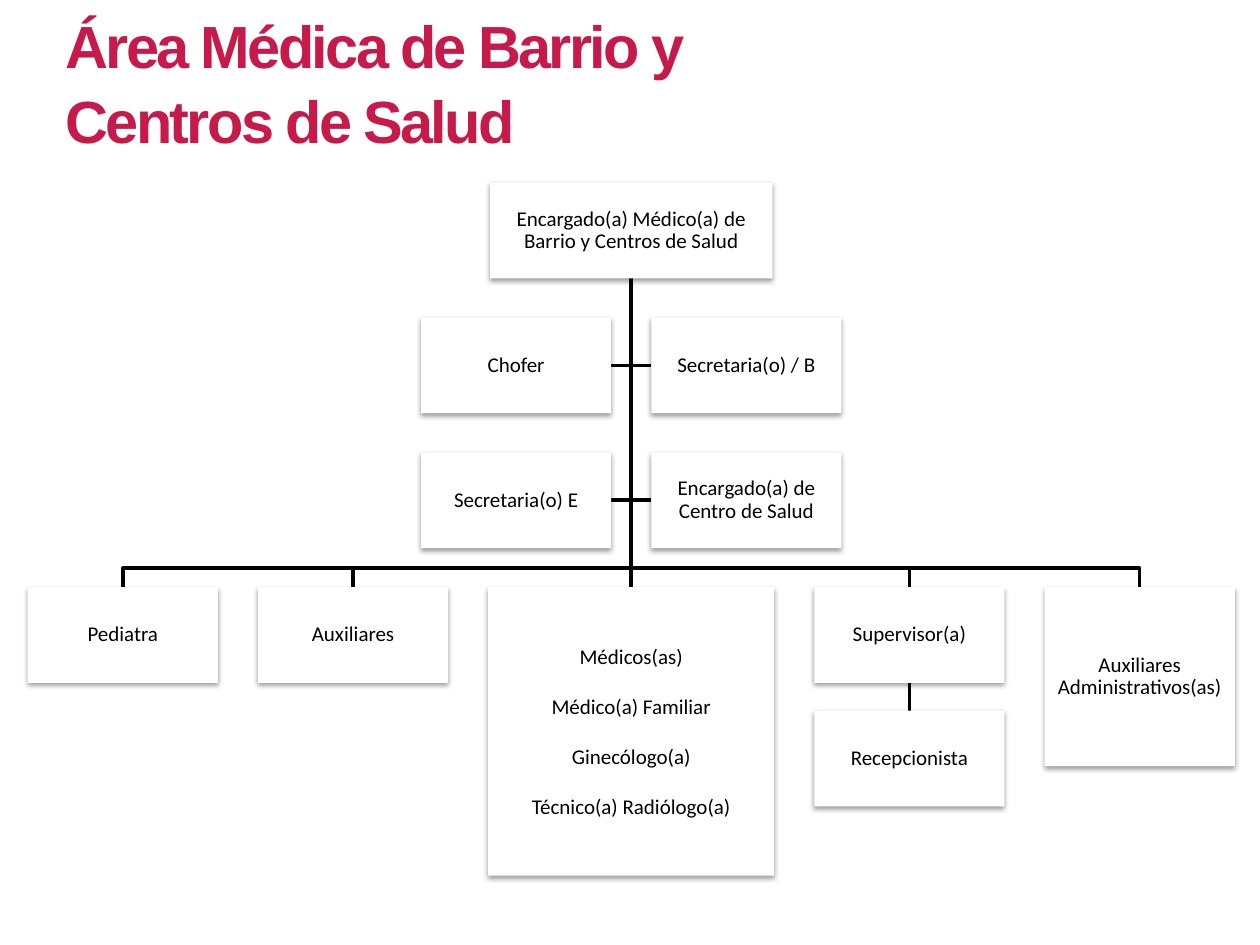
from dataclasses import dataclass

from lxml import etree
from pptx import Presentation
from pptx.dml.color import RGBColor
from pptx.enum.shapes import MSO_CONNECTOR, MSO_SHAPE
from pptx.enum.text import MSO_ANCHOR, MSO_AUTO_SIZE, PP_ALIGN
from pptx.oxml.ns import qn
from pptx.util import Inches, Pt

CRIMSON = RGBColor(0xC5, 0x1A, 0x4A)
BLACK = RGBColor(0, 0, 0)
WHITE = RGBColor(0xFF, 0xFF, 0xFF)

STRAIGHT = MSO_CONNECTOR.STRAIGHT
RECTANGLE = MSO_SHAPE.RECTANGLE
MIDDLE = MSO_ANCHOR.MIDDLE
CENTER, LEFT = PP_ALIGN.CENTER, PP_ALIGN.LEFT

# Grid of the chart, in inches
CHART_LEFT, CHART_RIGHT = 0.22, 9.8
FIRST_ROW, ROW_PITCH = 1.45, 1.07
POST_WIDTH, POST_HEIGHT = 1.51, 0.76
HEAD_WIDTH, DOCTORS_WIDTH = 2.24, 2.27
COLUMN_GAP = (CHART_RIGHT - CHART_LEFT - 4 * POST_WIDTH - DOCTORS_WIDTH) / 4
SUBORDINATE_GAP = 0.22
BRANCH_RISE = 0.15


@dataclass
class Post:
    """A box of the chart; each line of its label is a paragraph."""
    label: str
    left: float = 0
    top: float = 0
    width: float = POST_WIDTH
    height: float = POST_HEIGHT

    @property
    def center(self) -> float:
        return self.left + self.width / 2

    @property
    def middle(self) -> float:
        return self.top + self.height / 2

    @property
    def bottom(self) -> float:
        return self.top + self.height


def row_top(row: int) -> float:
    return FIRST_ROW + row * ROW_PITCH


def add_title(slide, text: str) -> None:
    title = slide.shapes.title
    title.left, title.top = Inches(0.42), 0
    title.width, title.height = Inches(6.81), Inches(1.28)
    frame = title.text_frame
    frame.text = text
    frame.word_wrap = True
    frame.auto_size = MSO_AUTO_SIZE.NONE
    frame.vertical_anchor = MIDDLE
    paragraph = frame.paragraphs[0]
    paragraph.alignment = LEFT
    paragraph.line_spacing = 1.05
    run = paragraph.runs[0]
    run.font.name, run.font.size, run.font.bold = "Arial", Pt(34), True
    run.font.color.rgb = CRIMSON
    run.font._element.set("spc", "-150")


def add_soft_shadow(shape) -> None:
    shape.shadow.inherit = False
    effects = shape._element.spPr.find(qn("a:effectLst"))
    shadow = etree.SubElement(
        effects, qn("a:outerShdw"), blurRad=str(Pt(3.1)), dist=str(Pt(1.6)),
        dir="5400000", algn="ctr", rotWithShape="0")
    color = etree.SubElement(shadow, qn("a:srgbClr"), val=str(BLACK))
    etree.SubElement(color, qn("a:alpha"), val="38000")


def add_post(slide, post: Post) -> None:
    box = slide.shapes.add_shape(
        RECTANGLE, Inches(post.left), Inches(post.top),
        Inches(post.width), Inches(post.height))
    box.fill.solid()
    box.fill.fore_color.rgb = WHITE
    box.line.fill.background()
    add_soft_shadow(box)

    frame = box.text_frame
    frame.text = post.label
    frame.word_wrap = True
    frame.vertical_anchor = MIDDLE
    frame.margin_left = frame.margin_right = Inches(0.01)
    frame.margin_top = frame.margin_bottom = Inches(0.01)
    for index, paragraph in enumerate(frame.paragraphs):
        paragraph.alignment = CENTER
        paragraph.line_spacing = 0.9 if len(frame.paragraphs) == 1 else 1.0
        if index:
            paragraph.space_before = Pt(14.2)
        font = paragraph.runs[0].font
        font.name, font.size = "Calibri", Pt(12)
        font.color.rgb = BLACK


def add_link(slide, points: list[tuple[float, float]]) -> None:
    """Draw a straight or bent line through the points, given in inches."""
    corners = [(Inches(x), Inches(y)) for x, y in points]
    if len(corners) == 2:
        link = slide.shapes.add_connector(STRAIGHT, *corners[0], *corners[1])
        etree.SubElement(link._element.spPr, qn("a:effectLst"))
    else:
        builder = slide.shapes.build_freeform(*corners[0])
        builder.add_line_segments(corners[1:], close=False)
        link = builder.convert_to_shape()
        link.fill.background()
        link.shadow.inherit = False
    link.line.color.rgb = BLACK
    link.line.width = Pt(2)


def main() -> None:
    doctors = Post("Médicos(as)\nMédico(a) Familiar\nGinecólogo(a)\n"
                   "Técnico(a) Radiólogo(a)", width=DOCTORS_WIDTH, height=2.29)
    supervisor = Post("Supervisor(a)")
    team = [Post("Pediatra"), Post("Auxiliares"), doctors, supervisor,
            Post("Auxiliares Administrativos(as)", height=1.42)]
    left = CHART_LEFT
    for post in team:
        post.left, post.top = left, row_top(3)
        left += post.width + COLUMN_GAP

    axis = doctors.center
    head = Post("Encargado(a) Médico(a) de Barrio y Centros de Salud",
                axis - HEAD_WIDTH / 2, row_top(0), HEAD_WIDTH)
    receptionist = Post("Recepcionista", supervisor.left,
                        supervisor.bottom + SUBORDINATE_GAP)

    left_side = axis - COLUMN_GAP / 2 - POST_WIDTH
    right_side = axis + COLUMN_GAP / 2
    assistants = [
        Post("Chofer", left_side, row_top(1)),
        Post("Secretaria(o) / B", right_side, row_top(1)),
        Post("Secretaria(o) E", left_side, row_top(2)),
        Post("Encargado(a) de Centro de Salud", right_side, row_top(2)),
    ]

    presentation = Presentation()
    presentation.slide_width, presentation.slide_height = Inches(10), Inches(7.5)
    slide = presentation.slides.add_slide(presentation.slide_layouts[5])
    add_title(slide, "Área Médica de Barrio y Centros de Salud")

    start = (axis, head.bottom)
    for post in assistants:
        edge = post.left if post.left > axis else post.left + post.width
        add_link(slide, [start, (axis, post.middle), (edge, post.middle)])
    for post in team:
        branch = post.top - BRANCH_RISE
        bend = [] if post is doctors else [(axis, branch), (post.center, branch)]
        add_link(slide, [start, *bend, (post.center, post.top)])
    add_link(slide, [(supervisor.center, supervisor.bottom),
                     (receptionist.center, receptionist.top)])

    for post in [head, *team, receptionist, *assistants]:
        add_post(slide, post)

    presentation.save("out.pptx")


if __name__ == "__main__":
    main()
